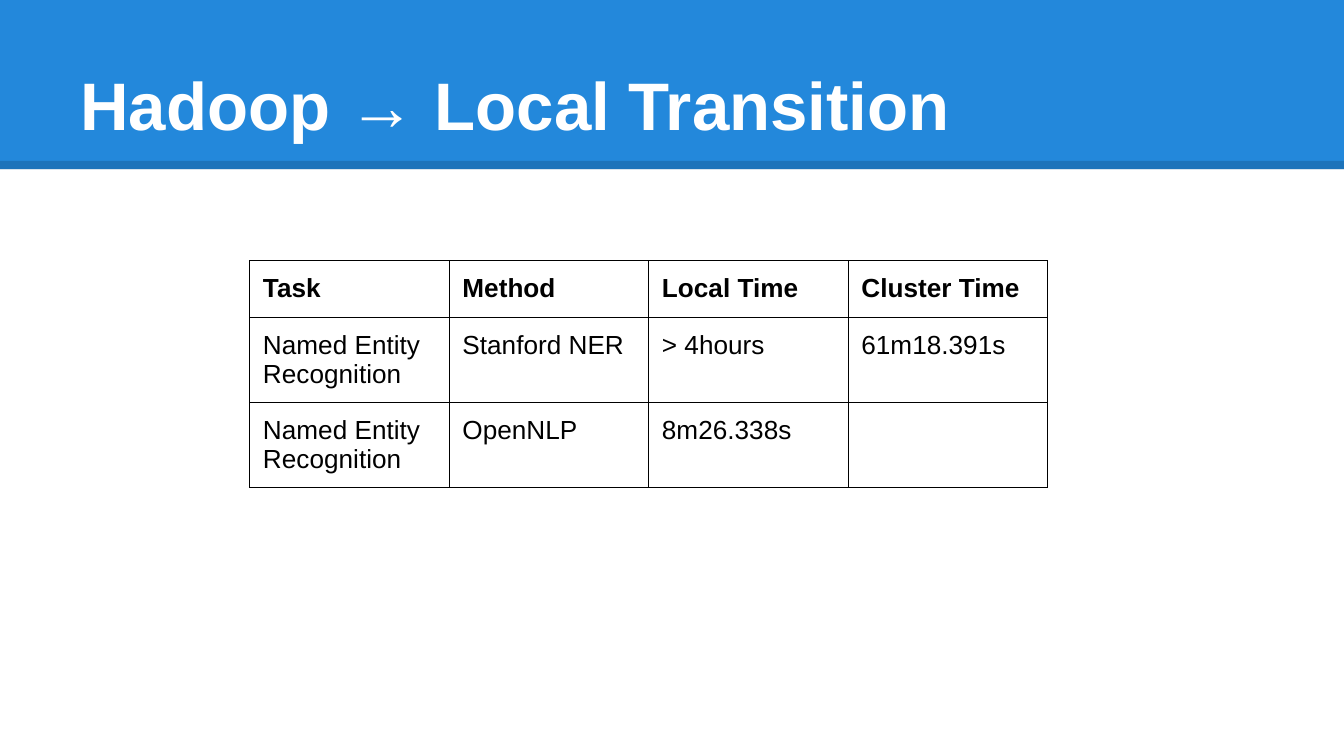
from lxml.etree import SubElement
from pptx import Presentation
from pptx.dml.color import RGBColor
from pptx.enum.shapes import MSO_CONNECTOR, MSO_SHAPE
from pptx.enum.text import MSO_ANCHOR, MSO_AUTO_SIZE, PP_ALIGN
from pptx.oxml.ns import qn
from pptx.util import Cm, Pt

TITLE = "Hadoop → Local Transition"
ROWS = [
    ("Task", "Method", "Local Time", "Cluster Time"),
    ("Named Entity Recognition", "Stanford NER", "> 4hours", "61m18.391s"),
    ("Named Entity Recognition", "OpenNLP", "8m26.338s", ""),
]
COLORS = {"banner": "2388DB", "ink": "000000", "title": "FFFFFF"}
FONT = "Arial"
PAGE_WIDTH, PAGE_HEIGHT = Cm(25.4), Cm(14.29)
BANNER_HEIGHT, RULE_TOP = Cm(3.2), Cm(3.12)
TABLE_LEFT, TABLE_TOP = Cm(4.72), Cm(4.93)
COLUMN_WIDTH, ROW_HEIGHT = Cm(3.77), Cm(1.07)
INSET = Cm(0.25)
RULE_OPACITY = 15


def color(name):
    return RGBColor.from_string(COLORS[name])


def write(frame, text, *, size, ink, bold=False, anchor=MSO_ANCHOR.TOP):
    frame.word_wrap = True
    frame.vertical_anchor = anchor
    paragraph = frame.paragraphs[0]
    paragraph.alignment = PP_ALIGN.LEFT
    paragraph.line_spacing = 1.0
    paragraph.font.size = Pt(size)
    if text:
        span = paragraph.add_run()
        span.text = text
        span.font.name = FONT
        span.font.size = Pt(size)
        span.font.bold = bold
        span.font.color.rgb = color(ink)


def set_insets(target):
    target.margin_left = target.margin_right = INSET
    target.margin_top = target.margin_bottom = INSET


def add_borders(cell):
    properties = cell._tc.get_or_add_tcPr()
    for index, side in enumerate(("lnL", "lnR", "lnT", "lnB")):
        line = SubElement(properties, qn(f"a:{side}"), w=str(Pt(0.75)))
        fill = SubElement(line, qn("a:solidFill"))
        SubElement(fill, qn("a:srgbClr"), val=COLORS["ink"])
        properties.insert(index, line)


def add_banner(page):
    banner = page.shapes.add_shape(MSO_SHAPE.RECTANGLE, 0, 0, PAGE_WIDTH, BANNER_HEIGHT)
    banner.shadow.inherit = False
    banner.fill.solid()
    banner.fill.fore_color.rgb = color("banner")
    banner.line.fill.background()

    rule = page.shapes.add_connector(MSO_CONNECTOR.STRAIGHT, 0, RULE_TOP, PAGE_WIDTH, RULE_TOP)
    rule.line.width = Pt(4.5)
    rule.line.color.rgb = color("ink")
    shade = rule.element.spPr.find(".//" + qn("a:srgbClr"))
    SubElement(shade, qn("a:alpha"), val=str(RULE_OPACITY * 1000))
    SubElement(rule.element.spPr, qn("a:effectLst"))


def add_title(page):
    title = page.shapes.title
    title.left, title.top, title.width, title.height = Cm(1.27), Cm(0.58), Cm(22.86), Cm(2.39)
    title.text_frame.auto_size = MSO_AUTO_SIZE.NONE
    set_insets(title.text_frame)
    write(title.text_frame, TITLE, size=36, ink="title", bold=True, anchor=MSO_ANCHOR.BOTTOM)
    # The placeholder comes first in the tree; lift it above the banner.
    title.element.getparent().append(title.element)


def add_times(page):
    columns = len(ROWS[0])
    table = page.shapes.add_table(
        len(ROWS), columns, TABLE_LEFT, TABLE_TOP, COLUMN_WIDTH * columns, ROW_HEIGHT * len(ROWS)
    ).table
    table.horz_banding = False
    for column in table.columns:
        column.width = COLUMN_WIDTH
    for row_index, (row, texts) in enumerate(zip(table.rows, ROWS)):
        row.height = ROW_HEIGHT
        for cell, text in zip(row.cells, texts):
            cell.fill.background()
            set_insets(cell)
            write(cell.text_frame, text, size=14, ink="ink", bold=row_index == 0)
            add_borders(cell)


def main():
    deck = Presentation()
    deck.slide_width, deck.slide_height = PAGE_WIDTH, PAGE_HEIGHT
    page = deck.slides.add_slide(deck.slide_layouts[5])
    add_banner(page)
    add_title(page)
    add_times(page)
    deck.save("out.pptx")


if __name__ == "__main__":
    main()
